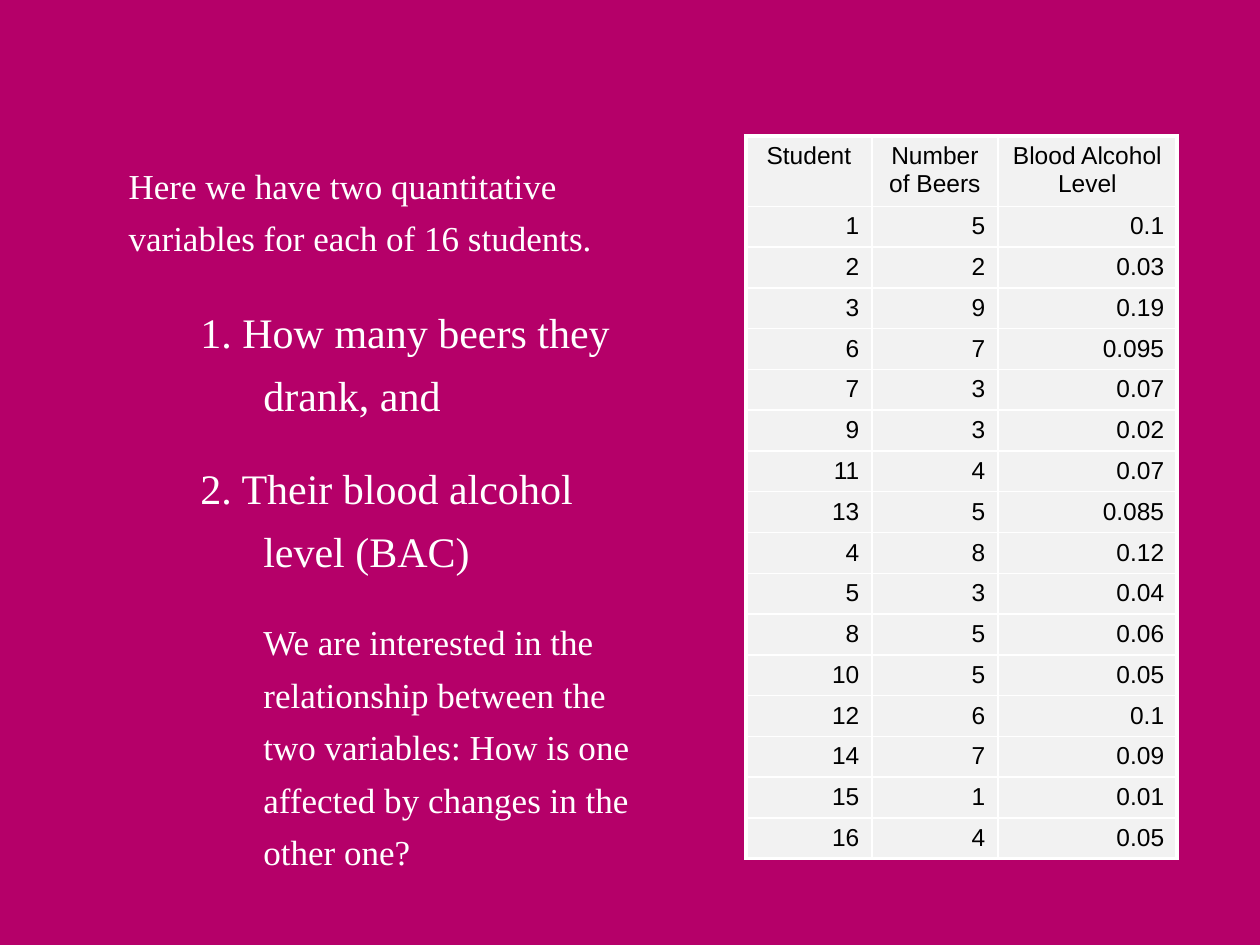
from lxml.etree import SubElement
from pptx import Presentation
from pptx.dml.color import RGBColor
from pptx.enum.text import MSO_AUTO_SIZE, PP_ALIGN
from pptx.oxml.ns import qn
from pptx.util import Inches, Pt


def color(code):
    """Turn a hex string into a colour."""
    return RGBColor.from_string(code)


class Deck:
    """Hold the style and the current slide."""

    back, white, black, pale = "B50069", "FFFFFF", "000000", "F2F2F2"
    serif, sans = "Times New Roman", "Arial"

    def __init__(self):
        """Start the deck with one slide."""
        self.prs = Presentation()
        self.prs.slide_width, self.prs.slide_height = Inches(10), Inches(7.5)
        self.slide = self.prs.slides.add_slide(self.prs.slide_layouts[1])
        fill = self.slide.background.fill
        fill.solid()
        fill.fore_color.rgb = color(self.back)
        title = self.slide.shapes.title
        title.element.getparent().remove(title.element)

    def style(self, para, size, font, ink):
        """Format the runs of a paragraph."""
        for run in para.runs:
            run.font.size = Pt(size)
            run.font.name = font
            run.font.color.rgb = color(ink)

    def body(self, left, top, width, height, items):
        """Fill the body placeholder with (text, size, level, left, first, gap) items."""
        box = self.slide.placeholders[1]
        box.left, box.top = Inches(left), Inches(top)
        box.width, box.height = Inches(width), Inches(height)
        frame = box.text_frame
        frame.word_wrap = True
        frame.auto_size = MSO_AUTO_SIZE.SHAPE_TO_FIT_TEXT
        frame.text = "\n".join(item[0] for item in items)
        for para, (_, size, level, indent, first, gap) in zip(frame.paragraphs, items):
            para.level = level
            props = para._p.get_or_add_pPr()
            props.set("marL", str(Inches(indent)))
            props.set("indent", str(Inches(first)))
            SubElement(props, qn("a:buNone"))
            para.line_spacing = 1.25
            para.space_before = Pt(gap)
            self.style(para, size, self.serif, self.white)

    def edge(self, cell, side, width):
        """Draw one border of a cell."""
        line = SubElement(cell._tc.get_or_add_tcPr(), qn("a:ln" + side), w=str(Pt(width)))
        fill = SubElement(line, qn("a:solidFill"))
        SubElement(fill, qn("a:srgbClr"), val=self.white)

    def table(self, left, top, height, head, widths, rows):
        """Add a table with a heavy outer frame."""
        count, last = len(rows), len(widths) - 1
        frame = self.slide.shapes.add_table(
            count, len(widths), Inches(left), Inches(top), Inches(sum(widths)), Inches(height))
        grid = frame.table
        grid.first_row = grid.horz_banding = False
        for col, width in zip(grid.columns, widths):
            col.width = Inches(width)
        for r, row in enumerate(rows):
            grid.rows[r].height = Inches((height - head) / (count - 1) if r else head)
            for c, text in enumerate(row):
                cell = grid.cell(r, c)
                cell.margin_top, cell.margin_bottom = Inches(0.05), Inches(0.04)
                outer = {"L": c == 0, "R": c == last, "T": r == 0, "B": r == count - 1}
                for side, heavy in outer.items():
                    self.edge(cell, side, 2.25 if heavy else 1)
                cell.fill.solid()
                cell.fill.fore_color.rgb = color(self.pale)
                cell.text_frame.text = str(text)
                para = cell.text_frame.paragraphs[0]
                para.alignment = PP_ALIGN.RIGHT if r else PP_ALIGN.CENTER
                self.style(para, 14, self.sans, self.black)

    def save(self):
        """Write the file."""
        self.prs.save("out.pptx")


def main():
    """Build the slide."""
    deck = Deck()
    deck.body(0.92, 1.17, 4.25, 5.14, [
        ("Here we have two quantitative variables for each of 16 students.", 20, 0, 0, 0, 0),
        ("1. How many beers they drank, and", 24, 1, 1.07, -0.5, 20),
        ("2. Their blood alcohol level (BAC)", 24, 1, 1.07, -0.5, 17),
        ("We are interested in the relationship between the two variables: "
         "How is one affected by changes in the other one?", 20, 1, 1.07, 0, 20),
    ])
    deck.table(5.92, 1.08, 5.64, 0.54, [1, 1, 1.42], [
        ("Student", "Number of Beers", "Blood Alcohol Level"),
        (1, 5, 0.1), (2, 2, 0.03), (3, 9, 0.19), (6, 7, 0.095),
        (7, 3, 0.07), (9, 3, 0.02), (11, 4, 0.07), (13, 5, 0.085),
        (4, 8, 0.12), (5, 3, 0.04), (8, 5, 0.06), (10, 5, 0.05),
        (12, 6, 0.1), (14, 7, 0.09), (15, 1, 0.01), (16, 4, 0.05),
    ])
    deck.save()


if __name__ == "__main__":
    main()
